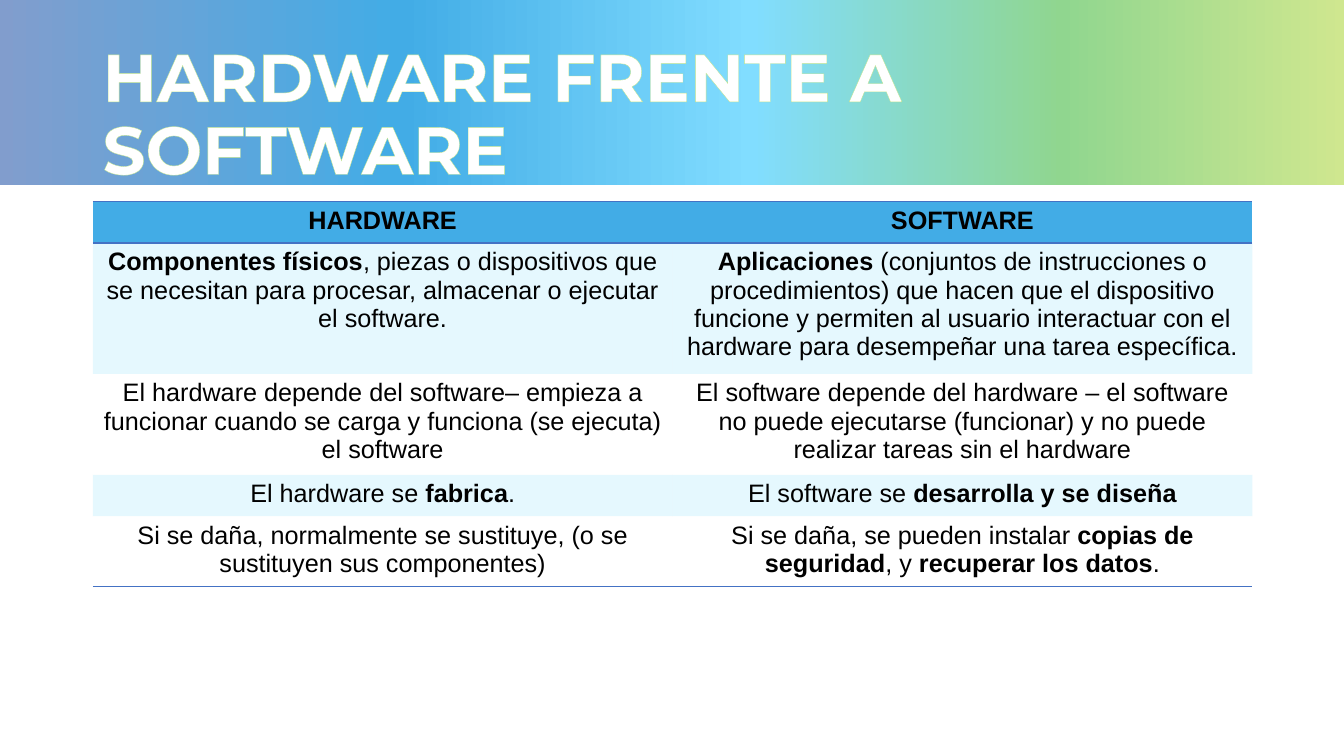
import lxml.etree
import pptx
import pptx.dml.color
import pptx.enum.shapes
import pptx.enum.text
import pptx.oxml
import pptx.oxml.ns
import pptx.util

Inches = pptx.util.Inches
Pt = pptx.util.Pt
qn = pptx.oxml.ns.qn

BANNER_STOPS = [(0, "819DCD"), (30, "42ACE6"), (56, "81DDFF"), (79, "90D68F"), (100, "CFE78F")]
ROW_HEIGHTS = [0.41, 1.22, 0.94, 0.41, 0.66]
ROWS = [
    ("**HARDWARE**", "**SOFTWARE**"),
    ("**Componentes físicos**, piezas o dispositivos que se necesitan para procesar, "
     "almacenar o ejecutar el software.",
     "**Aplicaciones **(conjuntos de instrucciones o procedimientos) que hacen que el "
     "dispositivo funcione y permiten al usuario interactuar con el hardware para "
     "desempeñar una tarea específica."),
    ("El hardware depende del software– empieza a funcionar cuando se carga y funciona "
     "(se ejecuta)\nel software",
     "El software depende del hardware – el software no puede ejecutarse (funcionar) y no "
     "puede realizar tareas sin el hardware"),
    ("El hardware se **fabrica**.", "El software se **desarrolla y se diseña**"),
    ("Si se daña, normalmente se sustituye, (o se sustituyen sus componentes)",
     "Si se daña, se pueden instalar **copias de seguridad**, y **recuperar los datos**."),
]


def rgb(color):
    """Return the colour for a hex string."""
    return pptx.dml.color.RGBColor.from_string(color)


def add_color(parent, color):
    """Append a hex colour element to an XML fill or gradient stop."""
    return lxml.etree.SubElement(parent, qn("a:srgbClr"), val=color)


def make_line(tag, color, width):
    """Return a line element, unfilled when the colour is None."""
    ln = pptx.oxml.parse_xml(f'<{tag} {pptx.oxml.ns.nsdecls("a")} w="{int(Pt(width))}"/>')
    if color:
        add_color(lxml.etree.SubElement(ln, qn("a:solidFill")), color)
    else:
        lxml.etree.SubElement(ln, qn("a:noFill"))
    return ln


def add_banner(slide, left, top, width, height):
    """Draw the gradient band across the top of the slide."""
    sp = slide.shapes.add_shape(pptx.enum.shapes.MSO_SHAPE.RECTANGLE, left, top, width, height)
    sp.shadow.inherit = False
    sp.line.fill.background()
    sp.fill.gradient()
    sp.fill.gradient_angle = 0
    stops = sp._element.spPr.find(".//" + qn("a:gsLst"))
    for stop in list(stops):
        stops.remove(stop)
    for position, color in BANNER_STOPS:
        add_color(lxml.etree.SubElement(stops, qn("a:gs"), pos=str(position * 1000)), color)


def add_title(slide, left, top, width, height, text):
    """Write the outlined title, centred vertically in its box."""
    tf = slide.shapes.add_textbox(left, top, width, height).text_frame
    tf.word_wrap = True
    tf.vertical_anchor = pptx.enum.text.MSO_ANCHOR.MIDDLE
    p = tf.paragraphs[0]
    p.line_spacing = 0.9
    r = p.add_run()
    r.text = text
    r.font.name = "Montserrat"
    r.font.size = Pt(48)
    r.font.bold = True
    r.font.color.rgb = rgb("FFFFFF")
    r._r.get_or_add_rPr().insert(0, make_line("a:ln", "BFE38F", 0.75))


def write_cell(cell, text):
    """Write centred text, with bold between double asterisks."""
    tf = cell.text_frame
    for i, line in enumerate(text.split("\n")):
        p = tf.add_paragraph() if i else tf.paragraphs[0]
        p.alignment = pptx.enum.text.PP_ALIGN.CENTER
        p.font.name = "Arial"
        p.font.size = Pt(18)
        p.font.color.rgb = rgb("000000")
        for j, part in enumerate(line.split("**")):
            if part:
                r = p.add_run()
                r.text = part
                r.font.bold = j % 2 == 1


def style_cell(cell, row):
    """Fill a cell and rule its edges according to its row."""
    if row == 0:
        cell.fill.solid()
        cell.fill.fore_color.rgb = rgb("42ACE6")
    elif row % 2:
        cell.fill.solid()
        cell.fill.fore_color.rgb = rgb("81DDFC")
        color = cell._tc.tcPr.find(".//" + qn("a:srgbClr"))
        lxml.etree.SubElement(color, qn("a:alpha"), val="20000")
    else:
        cell.fill.background()
    ruled = {"T": row in (0, 1), "B": row in (0, len(ROWS) - 1)}
    for i, side in enumerate("LRTB"):
        line = make_line(f"a:ln{side}", "4472C4" if ruled.get(side) else None, 1)
        cell._tc.tcPr.insert(i, line)


def add_comparison(slide, left, top, width):
    """Build the table that compares hardware with software."""
    table = slide.shapes.add_table(len(ROWS), 2, left, top, width,
                                   Inches(sum(ROW_HEIGHTS))).table
    table.first_row = False
    table.horz_banding = False
    for i, (texts, height) in enumerate(zip(ROWS, ROW_HEIGHTS)):
        table.rows[i].height = Inches(height)
        for j, text in enumerate(texts):
            write_cell(table.cell(i, j), text)
            style_cell(table.cell(i, j), i)


def main():
    """Build and save the slide."""
    prs = pptx.Presentation()
    prs.slide_width = Inches(13.33)
    prs.slide_height = Inches(7.5)
    slide = prs.slides.add_slide(prs.slide_layouts[6])
    left, width = Inches(0.92), Inches(11.5)
    add_banner(slide, 0, Inches(-0.08), prs.slide_width, Inches(1.92))
    add_title(slide, left, Inches(0.32), width, Inches(1.67), "HARDWARE FRENTE A SOFTWARE")
    add_comparison(slide, left, Inches(2), width)
    prs.save("out.pptx")


if __name__ == "__main__":
    main()
